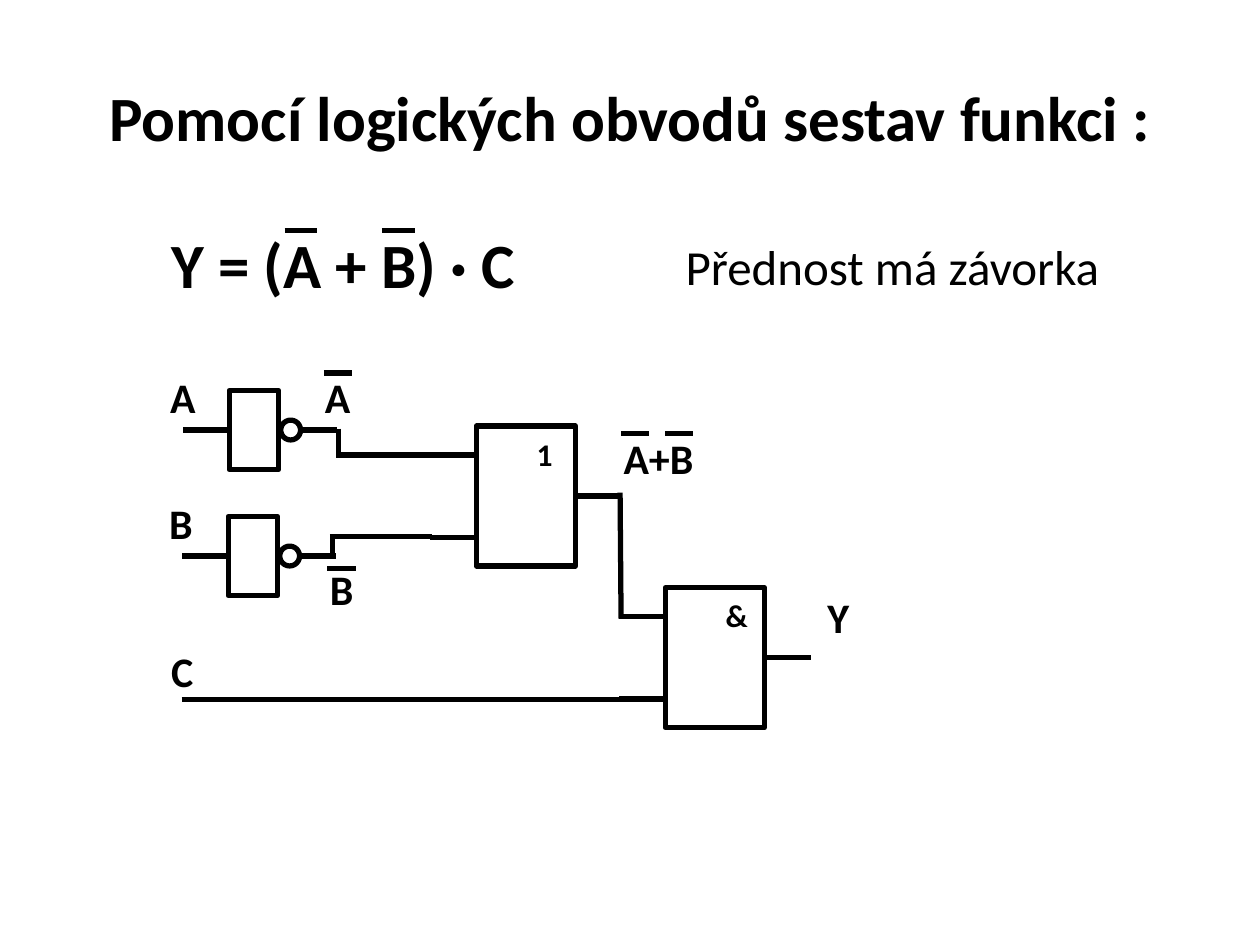
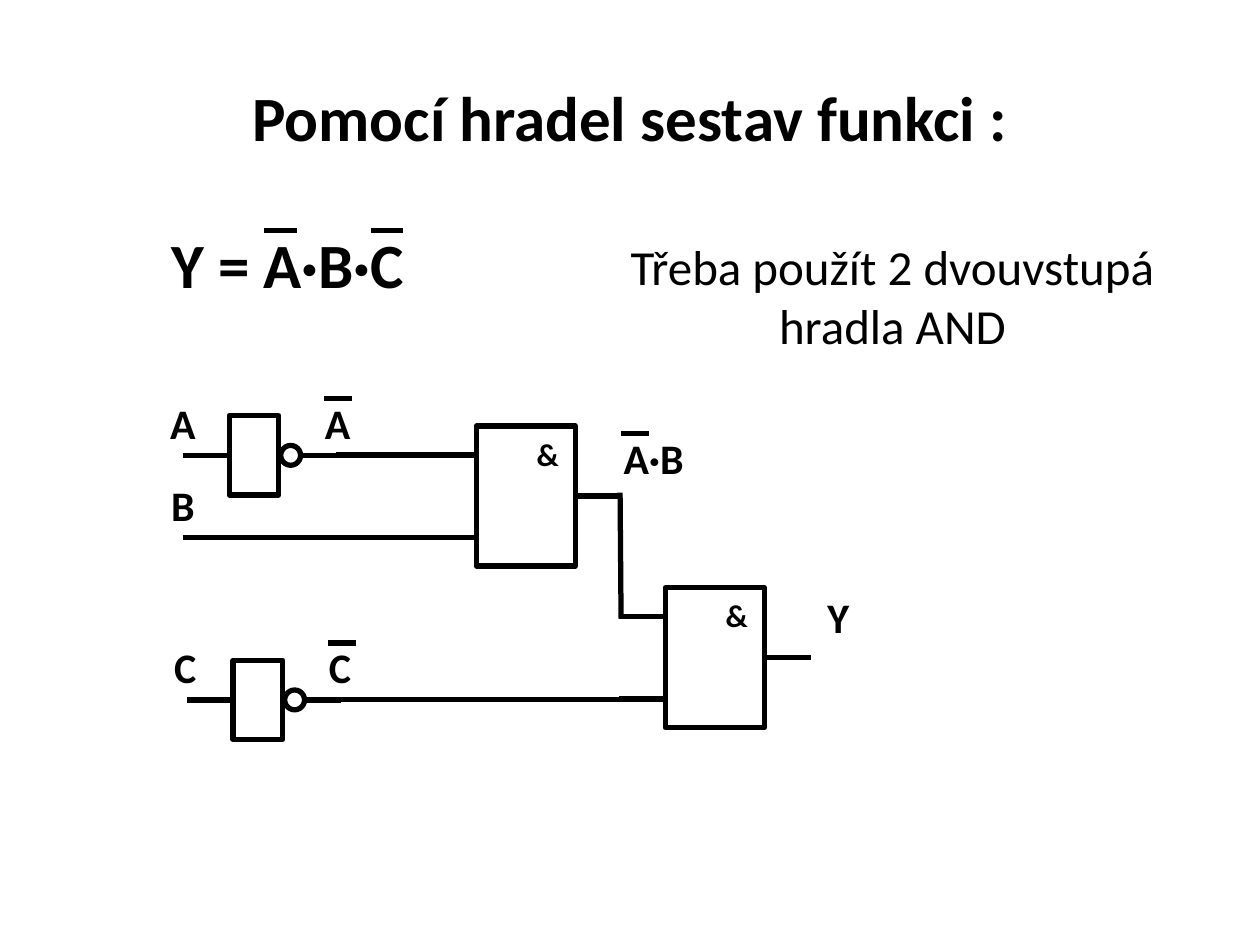
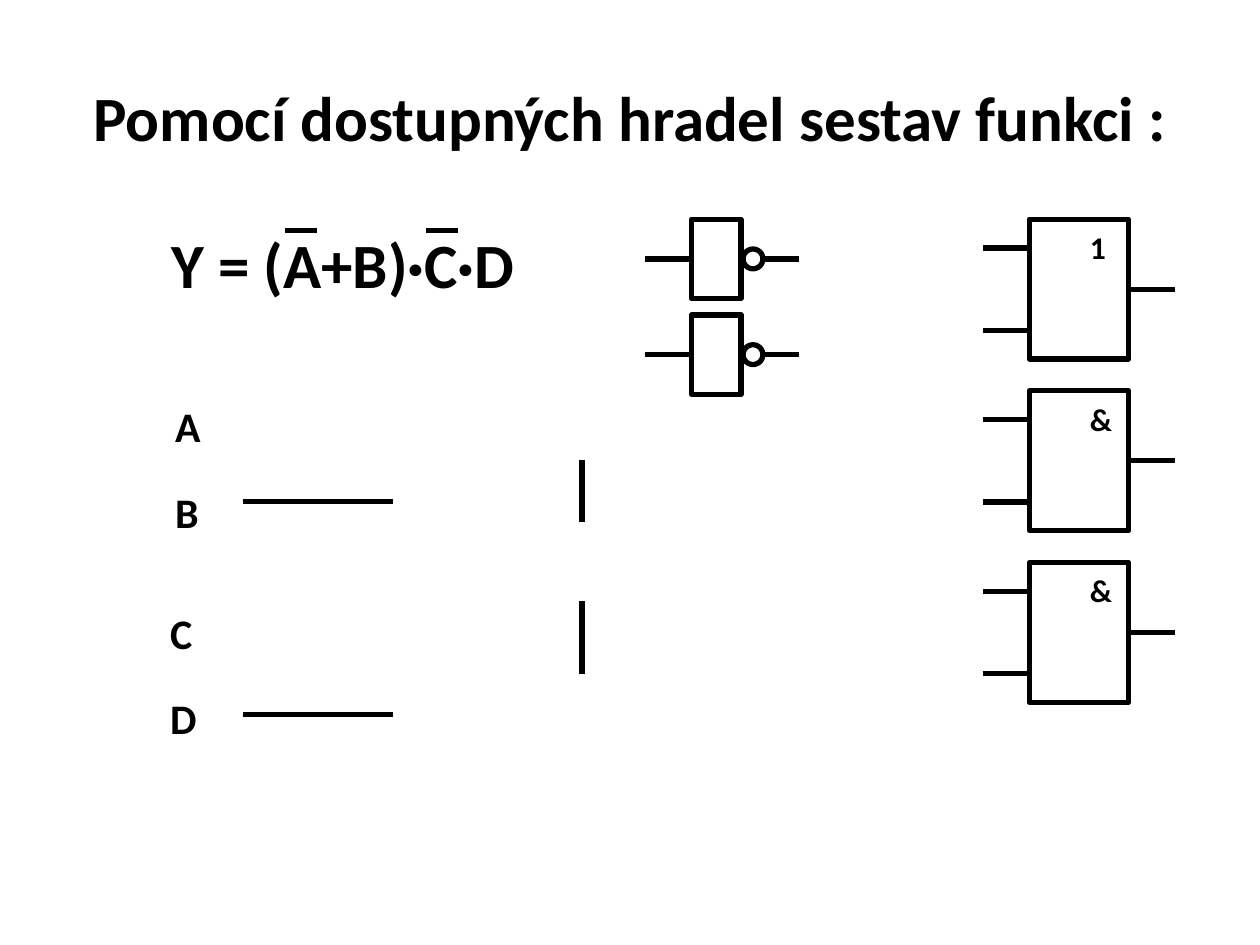
from lxml import etree
from pptx import Presentation
from pptx import util as u
from pptx.dml.color import RGBColor
from pptx.enum import shapes, text
from pptx.oxml import ns

HUES = {"ink": "000000", "paper": "FFFFFF"}
BOLD = {"name": "Calibri", "bold": True}
FORMS = {
    "title": {**BOLD, "size": u.Pt(36)},
    "sum": {**BOLD, "size": u.Pt(36)},
    "note": {"name": "Calibri", "bold": False, "size": u.Pt(28)},
    "pin": {**BOLD, "size": u.Pt(24)},
    "sign": {**BOLD, "size": u.Pt(18)},
}
BARS = {"sum": 0.66, "pin": 0.57}
GATE = (2, 2.82)
CELL = (1, 1.6)
STUB = 0.93


def hue(name):
    return RGBColor.from_string(HUES[name])


def fill_text(frame, words, form, align):
    frame.text = words
    par = frame.paragraphs[0]
    par.alignment = align
    font = par.runs[0].font
    for key, val in FORMS[form].items():
        setattr(font, key, val)
    font.color.rgb = hue("ink")


def ink(line):
    line.color.rgb = hue("ink")
    line.width = u.Pt(3)


def wire(slide, x1, y1, x2, y2):
    line = slide.shapes.add_connector(
        shapes.MSO_CONNECTOR.STRAIGHT, u.Cm(x1), u.Cm(y1), u.Cm(x2), u.Cm(y2))
    ink(line.line)
    etree.SubElement(line._element.spPr, ns.qn("a:effectLst"))


def block(slide, kind, x, y, wide, high, filled=True):
    part = slide.shapes.add_shape(kind, u.Cm(x), u.Cm(y), u.Cm(wide), u.Cm(high))
    part.shadow.inherit = False
    if filled:
        part.fill.solid()
        part.fill.fore_color.rgb = hue("paper")
    else:
        part.fill.background()
    ink(part.line)


def label(slide, words, x, y, wide=1, high=1.27, form="pin", bars=(),
          drop=0.15, align=text.PP_ALIGN.LEFT):
    """Write words, with a negation bar at each offset in bars."""
    box = slide.shapes.add_textbox(u.Cm(x), u.Cm(y), u.Cm(wide), u.Cm(high))
    box.text_frame.word_wrap = True
    fill_text(box.text_frame, words, form, align)
    for gap in bars:
        wire(slide, x + gap, y + drop, x + gap + BARS[form], y + drop)


def gate(slide, sign, x, y):
    wide, high = GATE
    block(slide, shapes.MSO_SHAPE.RECTANGLE, x, y, wide, high)
    label(slide, sign, x + 0.97, y + 0.05, 0.89, 1.02, "sign")
    wire(slide, x + wide, y + high / 2, x + wide + STUB, y + high / 2)
    for pin in (0.58, 2.24):
        wire(slide, x - STUB, y + pin, x, y + pin)


def negate(slide, x, y, name=None, after=False):
    """Draw an inverter, its input name and the negated name after it."""
    wide, high = CELL
    mid = y + high / 2
    block(slide, shapes.MSO_SHAPE.OVAL, x + 1.04, mid - 0.2, 0.4, 0.4, False)
    block(slide, shapes.MSO_SHAPE.RECTANGLE, x, y, wide, high)
    wire(slide, x + 1.45, mid, x + 2.17, mid)
    wire(slide, x - STUB, mid, x, mid)
    if name:
        label(slide, name, x - 1.44, y - 0.5)
    if after:
        label(slide, name, x + 1.68, y - 0.5, bars=[0.23])


def page(deck, title, formula, bars, wide):
    slide = deck.slides.add_slide(deck.slide_layouts[5])
    head = slide.shapes.title
    box = {"left": 1.27, "top": 0.76, "width": 22.86, "height": 3.18}
    for key, val in box.items():
        setattr(head, key, u.Cm(val))
    head.text_frame.vertical_anchor = text.MSO_ANCHOR.MIDDLE
    fill_text(head.text_frame, title, "title", text.PP_ALIGN.CENTER)
    label(slide, formula, 3.2, 4.42, wide, 1.8, "sum", bars, 0.22)
    return slide


def chain(slide, sign, mid, bars, note, high):
    """Draw the two linked gates, their output names and the note."""
    label(slide, note, 12.01, 4.65, 11.96, high, "note",
          align=text.PP_ALIGN.CENTER)
    gate(slide, sign, 9.6, 8.59)
    gate(slide, "&", 13.41, 11.85)
    wire(slide, 12.5, 9.93, 12.52, 12.47)
    label(slide, mid, 12.32, 8.59, 2.08, bars=bars)
    label(slide, "Y", 16.43, 11.79, 1.04)


def first(deck):
    slide = page(deck, "Pomocí logických obvodů sestav funkci :",
                 "Y = (A + B) · C", [2.54, 4.5], 9.63)
    chain(slide, "1", "A+B", [0.2, 1.09], "Přednost má závorka", 1.45)
    negate(slide, 4.62, 7.87, "A", True)
    negate(slide, 4.6, 10.41, "B")
    label(slide, "B", 6.4, 11.23, bars=[0.2], drop=0.23)
    label(slide, "C", 3.2, 12.88)
    for ends in ((6.78, 9.17, 8.74, 9.17), (6.83, 8.64, 6.83, 9.17),
                 (6.65, 10.82, 8.71, 10.82), (6.71, 10.82, 6.71, 11.23),
                 (3.66, 14.1, 12.52, 14.1)):
        wire(slide, *ends)


def second(deck):
    slide = page(deck, "Pomocí hradel sestav funkci :",
                 "Y = A·B·C", [2.13, 4.27], 6.96)
    chain(slide, "&", "A·B", [0.2], "Třeba použít 2 dvouvstupá hradla AND", 2.64)
    negate(slide, 4.62, 8.38, "A", True)
    negate(slide, 4.7, 13.31, "C", True)
    label(slide, "B", 3.2, 9.55)
    for x1, x2, y in ((6.78, 8.81, 9.17), (3.68, 8.69, 10.84), (6.81, 12.52, 14.1)):
        wire(slide, x1, y, x2, y)


def third(deck):
    slide = page(deck, "Pomocí dostupných hradel sestav funkci :",
                 "Y = (A+B)·C·D", [2.54, 5.38], 11.66)
    for row, sign in enumerate("1&&"):
        gate(slide, sign, 20.75, 4.42 + 3.46 * row)
    for row in range(2):
        negate(slide, 13.94, 4.42 + 1.93 * row)
    for name, x, y in (("A", 3.28, 7.95), ("B", 3.28, 9.68),
                       ("C", 3.18, 12.12), ("D", 3.18, 13.84)):
        label(slide, name, x, y)
    for y in (10.11, 14.4):
        wire(slide, 4.9, y, 7.92, y)
    for top, end in ((9.27, 10.52), (12.12, 13.59)):
        wire(slide, 11.73, top, 11.73, end)


def main():
    deck = Presentation()
    deck.slide_width, deck.slide_height = u.Cm(25.4), u.Cm(19.05)
    for build in (first, second, third):
        build(deck)
    deck.save("out.pptx")


if __name__ == "__main__":
    main()
